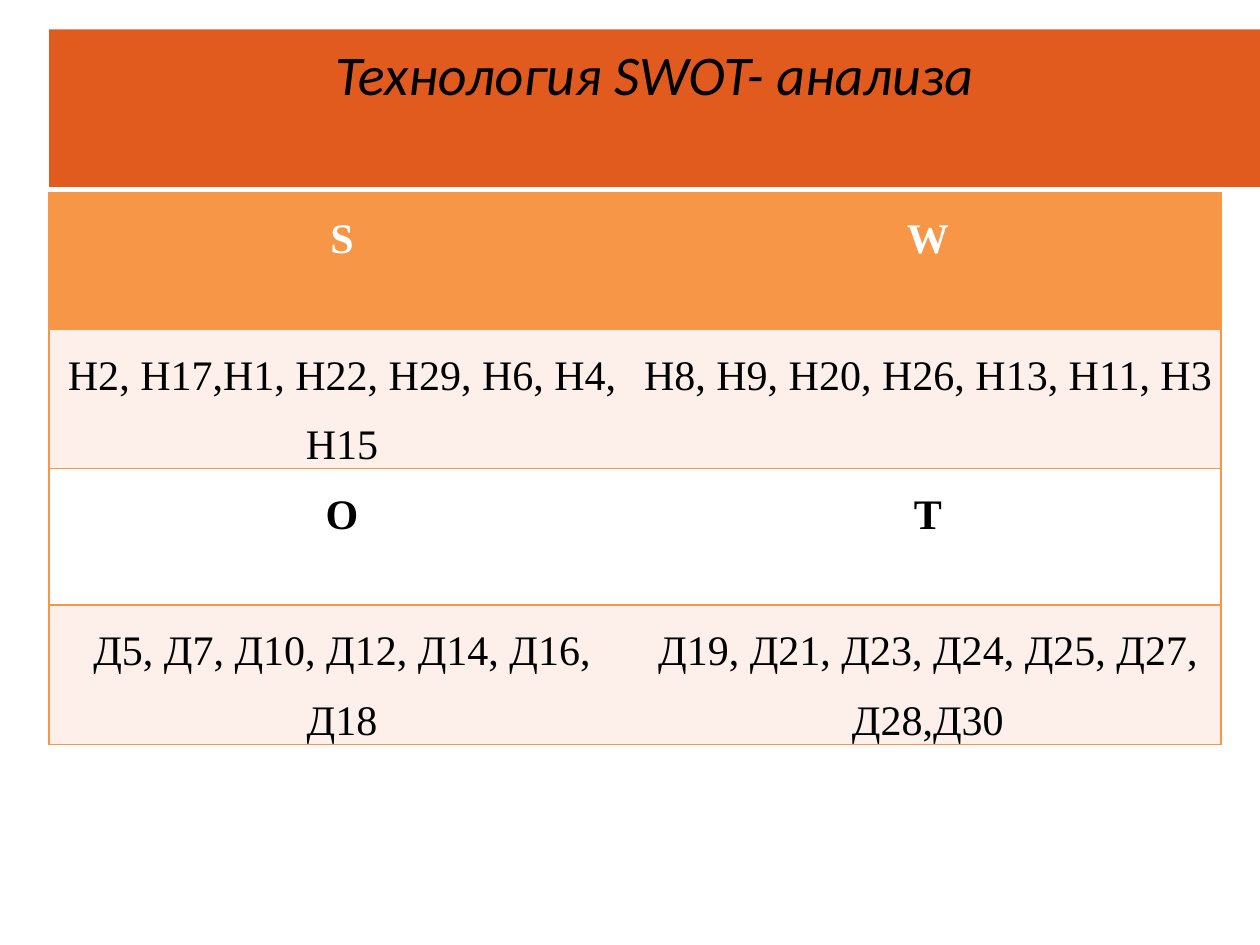
from dataclasses import dataclass

from lxml import etree
from pptx import Presentation
from pptx import util as u
from pptx.dml.color import RGBColor
from pptx.enum import text
from pptx.oxml import ns


@dataclass(frozen=True)
class Theme:
    banner: str = "E15B1F"
    accent: str = "F79646"
    tint: str = "FDEFE9"
    white: str = "FFFFFF"
    black: str = "000000"
    title_font: str = "Calibri"
    table_font: str = "Times New Roman"
    title_size: int = 32
    table_size: int = 24
    border_width: int = 1


@dataclass(frozen=True)
class SwotRow:
    cells: tuple[str, str]
    fill: str
    color: str
    bold: bool


THEME = Theme()
LEFT = u.Cm(0.99)
ROWS = (
    SwotRow(("S", "W"), THEME.accent, THEME.white, True),
    SwotRow(("Н2, Н17,Н1, Н22, Н29, Н6, Н4, Н15",
             "Н8, Н9, Н20, Н26, Н13, Н11, Н3"), THEME.tint, THEME.black, False),
    SwotRow(("O", "T"), THEME.white, THEME.black, True),
    SwotRow(("Д5, Д7, Д10, Д12, Д14, Д16, Д18",
             "Д19, Д21, Д23, Д24, Д25, Д27, Д28,Д30"), THEME.tint, THEME.black, False),
)


def add_title(slide, wording: str) -> None:
    title = slide.shapes.title
    title.left, title.top = LEFT, u.Cm(0.59)
    title.width, title.height = u.Cm(24.41), u.Cm(3.18)
    title.fill.solid()
    title.fill.fore_color.rgb = RGBColor.from_string(THEME.banner)
    frame = title.text_frame
    frame.text = wording
    frame.auto_size = text.MSO_AUTO_SIZE.NONE
    frame.vertical_anchor = text.MSO_ANCHOR.TOP
    frame.margin_top = u.Cm(0.2)
    para = frame.paragraphs[0]
    para.alignment = text.PP_ALIGN.CENTER
    font = para.runs[0].font
    font.name, font.size, font.italic = THEME.title_font, u.Pt(THEME.title_size), True
    font.color.rgb = RGBColor.from_string(THEME.black)


def set_borders(cell, visible: str) -> None:
    """Draw the sides named in visible (letters of LRTB) and hide the others."""
    properties = cell._tc.get_or_add_tcPr()
    for side in "LRTB":
        line = etree.SubElement(properties, ns.qn(f"a:ln{side}"),
                                w=str(u.Pt(THEME.border_width)))
        if side in visible:
            solid = etree.SubElement(line, ns.qn("a:solidFill"))
            etree.SubElement(solid, ns.qn("a:srgbClr"), val=THEME.accent)
        else:
            etree.SubElement(line, ns.qn("a:noFill"))


def format_cell(cell, wording: str, row: SwotRow, visible: str) -> None:
    set_borders(cell, visible)
    cell.fill.solid()
    cell.fill.fore_color.rgb = RGBColor.from_string(row.fill)
    cell.margin_left = cell.margin_right = u.Cm(0.18)
    cell.margin_top = cell.margin_bottom = 0
    cell.text_frame.text = wording
    para = cell.text_frame.paragraphs[0]
    para.alignment = text.PP_ALIGN.CENTER
    para.line_spacing = 1.5
    font = para.runs[0].font
    font.name, font.size, font.bold = THEME.table_font, u.Pt(THEME.table_size), row.bold
    font.color.rgb = RGBColor.from_string(row.color)


def add_swot_table(slide, rows: tuple[SwotRow, ...]) -> None:
    table = slide.shapes.add_table(len(rows), 2, LEFT, u.Cm(3.89),
                                   u.Cm(23.62), u.Cm(2.75) * len(rows)).table
    for row_index, row in enumerate(rows):
        for column, (wording, visible) in enumerate(zip(row.cells, ("LTB", "RTB"))):
            format_cell(table.cell(row_index, column), wording, row, visible)


def main() -> None:
    deck = Presentation()
    deck.slide_width, deck.slide_height = u.Cm(25.4), u.Cm(19.05)
    slide = deck.slides.add_slide(deck.slide_layouts.get_by_name("Title Only"))
    add_title(slide, "Технология SWOT- анализа")
    add_swot_table(slide, ROWS)
    deck.save("out.pptx")


if __name__ == "__main__":
    main()
